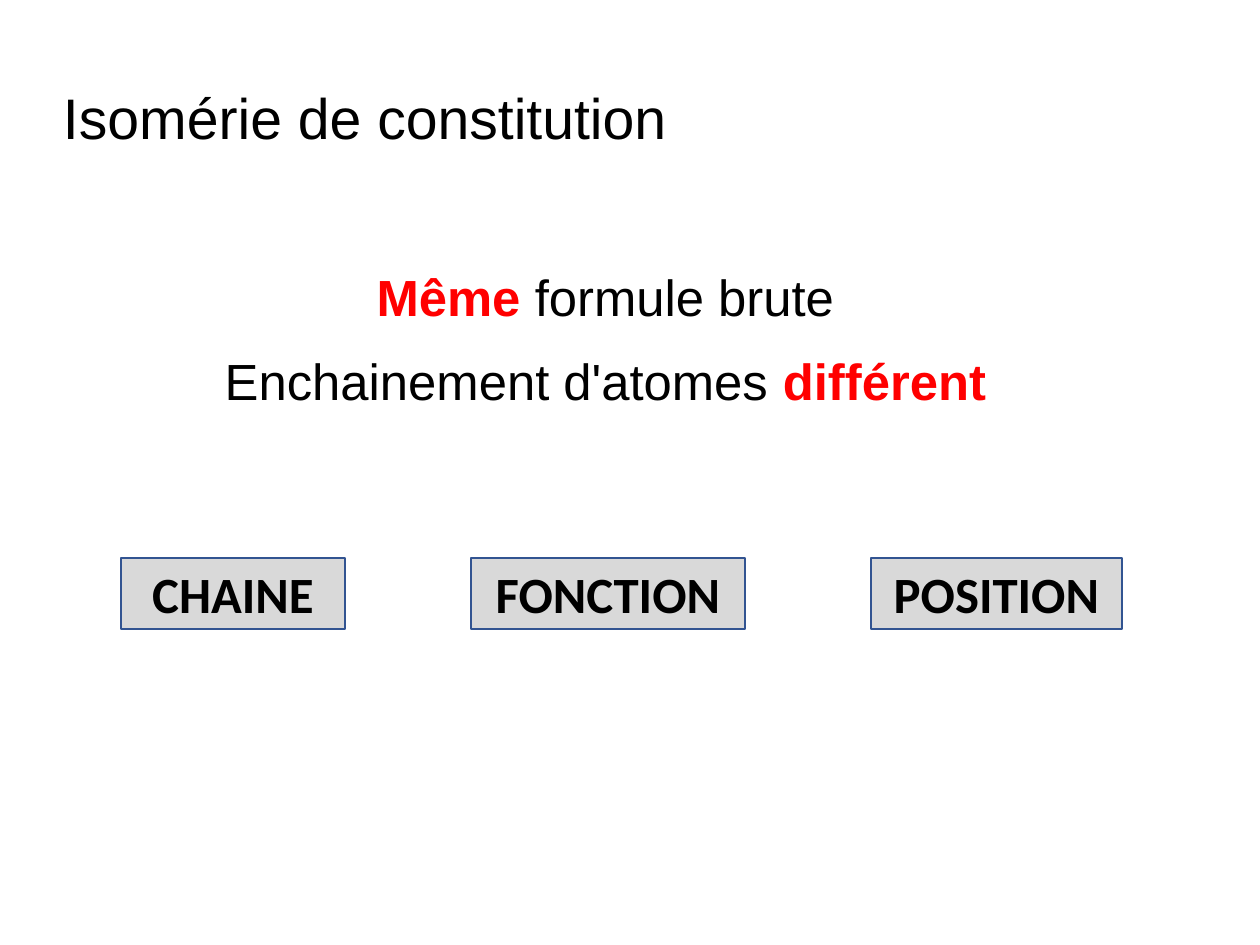
from typing import NamedTuple

from pptx import Presentation
from pptx.dml.color import RGBColor
from pptx.enum.shapes import MSO_SHAPE
from pptx.enum.text import MSO_ANCHOR, MSO_AUTO_SIZE, PP_ALIGN
from pptx.slide import Slide
from pptx.text.text import TextFrame, _Paragraph
from pptx.util import Emu, Pt

EMU_PER_PX = 8000
BLACK = RGBColor(0x00, 0x00, 0x00)
RED = RGBColor(0xFF, 0x00, 0x00)
GREY = RGBColor(0xD9, 0xD9, 0xD9)
BLUE = RGBColor(0x32, 0x54, 0x91)

BOX_LEFT, BOX_TOP, BOX_HEIGHT, BOX_GAP = 121, 558, 71, 126


class Run(NamedTuple):
    text: str
    color: RGBColor = BLACK
    bold: bool = False


class IsomerType(NamedTuple):
    label: str
    width: int


DEFINITION = [
    [Run("Même", RED, True), Run(" formule brute")],
    [Run("Enchainement d'atomes "), Run("différent", RED, True)],
]
ISOMER_TYPES = [
    IsomerType("CHAINE", 224),
    IsomerType("FONCTION", 274),
    IsomerType("POSITION", 251),
]


def px(n: int) -> Emu:
    return Emu(n * EMU_PER_PX)


def add_run(p: _Paragraph, run: Run, size: int, font: str) -> None:
    r = p.add_run()
    r.text = run.text
    r.font.name = font
    r.font.size = Pt(size)
    r.font.bold = run.bold
    r.font.color.rgb = run.color


def clear_margins(tf: TextFrame) -> None:
    tf.margin_left = tf.margin_top = tf.margin_right = tf.margin_bottom = 0
    tf.word_wrap = True


def add_title(s: Slide) -> None:
    title = s.shapes.title
    title.left, title.top, title.width, title.height = px(63), px(72), px(900), px(90)
    tf = title.text_frame
    clear_margins(tf)
    tf.auto_size = MSO_AUTO_SIZE.NONE
    tf.vertical_anchor = MSO_ANCHOR.MIDDLE
    p = tf.paragraphs[0]
    p.alignment = PP_ALIGN.LEFT
    add_run(p, Run("Isomérie de constitution"), 36, "Arial")


def add_definition(s: Slide) -> None:
    tf = s.shapes.add_textbox(px(194), px(266), px(823), px(211)).text_frame
    clear_margins(tf)
    for i, runs in enumerate(DEFINITION):
        p = tf.add_paragraph() if i else tf.paragraphs[0]
        p.alignment = PP_ALIGN.CENTER
        p.space_after = Pt(14.2)
        for run in runs:
            add_run(p, run, 32, "Arial")


def add_isomer_box(s: Slide, isomer: IsomerType, left: int) -> None:
    sp = s.shapes.add_shape(
        MSO_SHAPE.RECTANGLE, px(left), px(BOX_TOP), px(isomer.width), px(BOX_HEIGHT)
    )
    sp.shadow.inherit = False
    sp.fill.solid()
    sp.fill.fore_color.rgb = GREY
    sp.line.color.rgb = BLUE
    sp.line.width = Pt(1)
    tf = sp.text_frame
    tf.vertical_anchor = MSO_ANCHOR.MIDDLE
    p = tf.paragraphs[0]
    p.alignment = PP_ALIGN.CENTER
    add_run(p, Run(isomer.label, bold=True), 32, "Calibri")


def main() -> None:
    prs = Presentation()
    prs.slide_width, prs.slide_height = px(1260), px(945)
    s = prs.slides.add_slide(prs.slide_layouts.get_by_name("Title Only"))
    add_title(s)
    add_definition(s)
    left = BOX_LEFT
    for isomer in ISOMER_TYPES:
        add_isomer_box(s, isomer, left)
        left += isomer.width + BOX_GAP
    prs.save("out.pptx")


if __name__ == "__main__":
    main()
